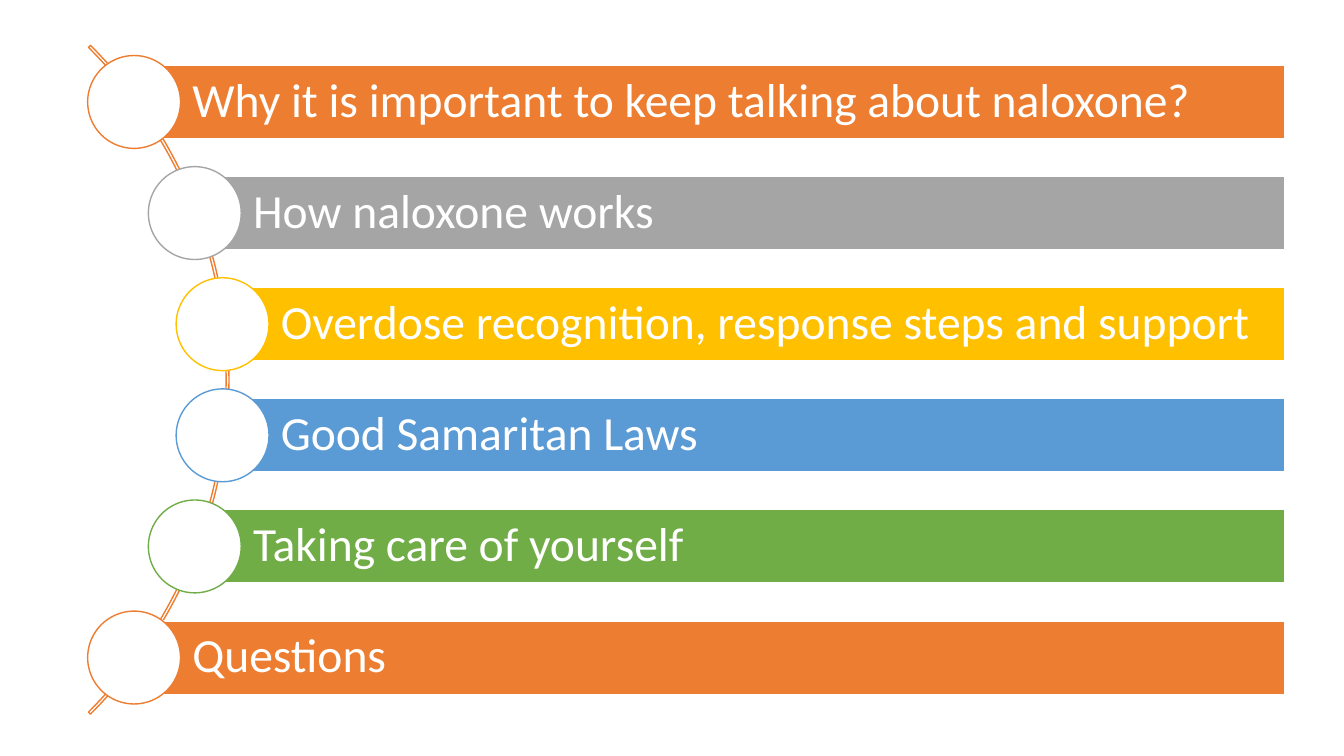
"""Build an agenda slide: six coloured bars with circles strung along an arc."""
import pptx
import pptx.dml.color
import pptx.enum.shapes
import pptx.enum.text
import pptx.util

Cm = pptx.util.Cm
Pt = pptx.util.Pt
MSO_SHAPE = pptx.enum.shapes.MSO_SHAPE

AGENDA = [
    ("Why it is important to keep talking about naloxone?", "ED7D31", 3.38),
    ("How naloxone works", "A5A5A5", 4.91),
    ("Overdose recognition, response steps and support", "FFC000", 5.61),
    ("Good Samaritan Laws", "5B9BD5", 5.61),
    ("Taking care of yourself", "70AD47", 4.91),
    ("Questions", "ED7D31", 3.38),
]
FIRST_CENTER = 2.57
PITCH = 2.8
BAR_HEIGHT = 1.85
BAR_RIGHT = 32.38
CIRCLE_SIZE = 2.34
ARC_SIZE = 23.83
ARC_LEFT = -18.06


def color(hex_string):
    return pptx.dml.color.RGBColor.from_string(hex_string)


def add_outlined_shape(kind, left, top, width, height, fill, line):
    shape = slide.shapes.add_shape(kind, Cm(left), Cm(top), Cm(width), Cm(height))
    shape.shadow.inherit = False
    if fill:
        shape.fill.solid()
        shape.fill.fore_color.rgb = color(fill)
    else:
        shape.fill.background()
    shape.line.color.rgb = color(line)
    shape.line.width = Pt(1)
    return shape


presentation = pptx.Presentation()
presentation.slide_width = Cm(33.87)
presentation.slide_height = Cm(19.05)
slide = presentation.slides.add_slide(presentation.slide_layouts[6])

arc_center = FIRST_CENTER + PITCH * (len(AGENDA) - 1) / 2
arc = add_outlined_shape(MSO_SHAPE.BLOCK_ARC, ARC_LEFT, arc_center - ARC_SIZE / 2,
                         ARC_SIZE, ARC_SIZE, None, "ED7D31")
for index, value in enumerate((189, 27, 0.003)):
    arc.adjustments[index] = value

for index, (topic, accent, left) in enumerate(AGENDA):
    center = FIRST_CENTER + index * PITCH
    bar = add_outlined_shape(MSO_SHAPE.RECTANGLE, left, center - BAR_HEIGHT / 2,
                             BAR_RIGHT - left, BAR_HEIGHT, accent, "FFFFFF")
    text_frame = bar.text_frame
    text_frame.word_wrap = True
    text_frame.vertical_anchor = pptx.enum.text.MSO_ANCHOR.MIDDLE
    text_frame.margin_left = Cm(1.47)
    text_frame.margin_top = text_frame.margin_right = text_frame.margin_bottom = Cm(0.24)
    text_frame.text = topic
    paragraph = text_frame.paragraphs[0]
    paragraph.alignment = pptx.enum.text.PP_ALIGN.LEFT
    paragraph.line_spacing = 0.9
    font = paragraph.runs[0].font
    font.name = "Calibri"
    font.size = Pt(34)
    font.color.rgb = color("FFFFFF")
    add_outlined_shape(MSO_SHAPE.OVAL, left - CIRCLE_SIZE / 2, center - CIRCLE_SIZE / 2,
                       CIRCLE_SIZE, CIRCLE_SIZE, "FFFFFF", accent)

presentation.save("out.pptx")
